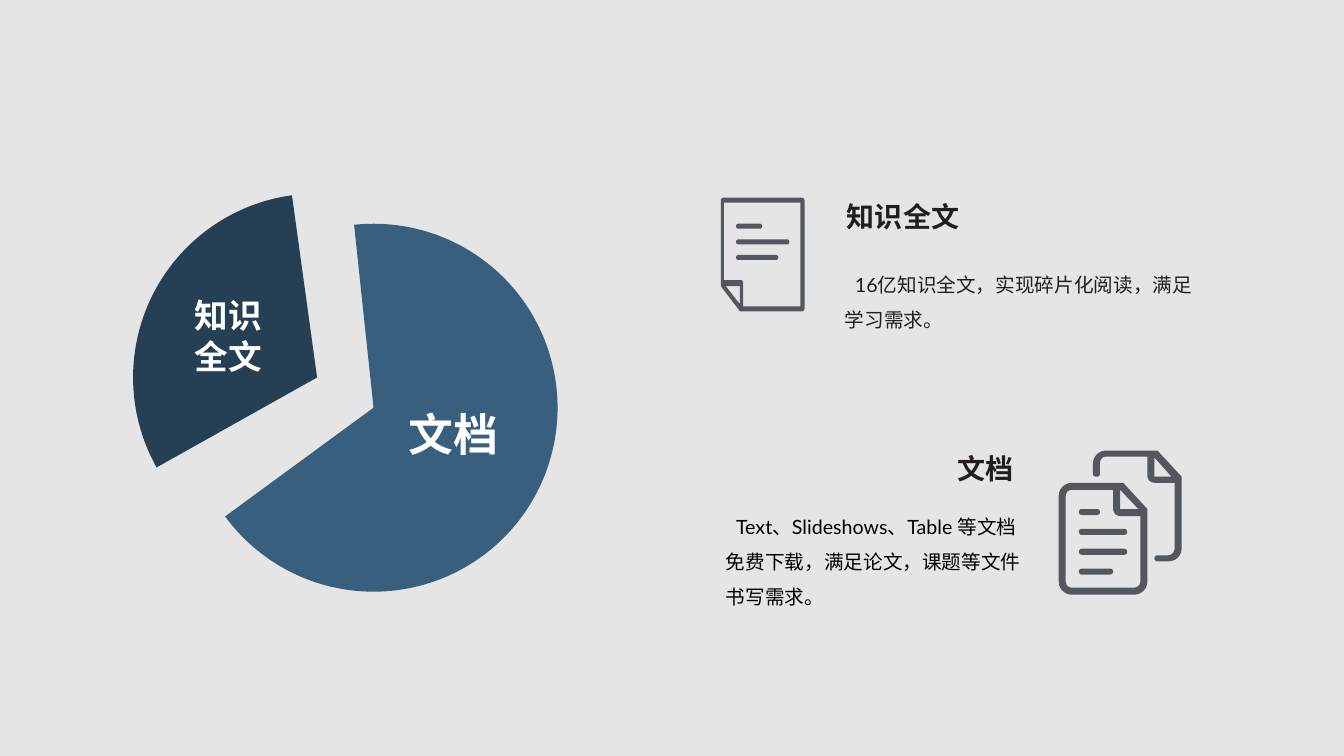
from pptx import Presentation
from pptx.dml.color import RGBColor
from pptx.enum.shapes import MSO_SHAPE
from pptx.enum.text import PP_ALIGN
from pptx.util import Inches, Pt

PIE = MSO_SHAPE.PIE
LEFT, CENTER, RIGHT = PP_ALIGN.LEFT, PP_ALIGN.CENTER, PP_ALIGN.RIGHT
COLORS = {"back": "E5E5E5", "blue": "385F7D", "navy": "253F54", "icon": "53585F",
          "ink": "231D1F", "black": "000000", "white": "FFFFFF"}
RGB = {name: RGBColor.from_string(value) for name, value in COLORS.items()}

prs = Presentation()
prs.slide_width, prs.slide_height = Inches(13.33), Inches(7.5)
U = prs.slide_height / 7.5  # one square cell of the 13.33 by 7.5 grid
s = prs.slides.add_slide(prs.slide_layouts[6])
s.background.fill.solid()
s.background.fill.fore_color.rgb = RGB["back"]


def add_text(parent, box, lines, size, color, align=LEFT, bold=False, spacing=None, indent=0):
    tb = parent.shapes.add_textbox(*[round(v * U) for v in box])
    tf = tb.text_frame
    tf.word_wrap = True
    tf.margin_left = tf.margin_right = round(0.05 * U)
    tf.margin_top = tf.margin_bottom = round(0.02 * U)
    tf.text = lines
    for p in tf.paragraphs:
        p.alignment = align
        p.line_spacing = spacing
        p.font.name, p.font.size, p.font.bold = "Lato", Pt(size), bold
        p.font.color.rgb = RGB[color]
        if indent:
            p._p.get_or_add_pPr().set("indent", str(round(indent * U)))


def rounded(corners):
    """Trace a closed outline of (x, y, radius) corners as slide points."""
    points = []
    for i, (x, y, radius) in enumerate(corners):
        ends = []
        for nx, ny, _ in (corners[i - 1], corners[(i + 1) % len(corners)]):
            share = radius / ((nx - x) ** 2 + (ny - y) ** 2) ** 0.5
            ends.append((x + (nx - x) * share, y + (ny - y) * share))
        (ax, ay), (bx, by) = ends
        for t in [k / 6 for k in range(7)] if radius else [0]:
            # cubic arc whose handles reach 0.55 of the way to the corner
            wa = (1 - t) ** 3 + 3 * (1 - t) ** 2 * t * 0.45
            wb = t ** 3 + 3 * (1 - t) * t ** 2 * 0.45
            wc = 1 - wa - wb
            points.append((round((wa * ax + wb * bx + wc * x) * U),
                           round((wa * ay + wb * by + wc * y) * U)))
    return points


# Pie slices: left, top, start and end in degrees
for left, top, start, end, color in [(1.88, 2.22, 263.93, 143.76, "blue"),
                                     (1.32, 1.92, 150.73, 262.15, "navy")]:
    sp = s.shapes.add_shape(PIE, *[round(v * U) for v in (left, top, 3.65, 3.65)])
    sp.adjustments[0], sp.adjustments[1] = start * 0.6, end * 0.6
    sp.fill.solid()
    sp.fill.fore_color.rgb = RGB[color]
    sp.line.fill.background()
    sp.shadow.inherit = False

add_text(s, (1.53, 2.91, 1.47, 0.45), "知识\n全文", 24, "white", CENTER, True)
add_text(s, (3.76, 4.01, 1.47, 0.45), "文档", 32, "white", CENTER, True)

# Icon outlines: corners as x, y, radius
page = [
    [(7.15, 1.96, 0.03), (7.98, 1.96, 0.03), (7.98, 3.09, 0.03), (7.34, 3.09, 0), (7.15, 2.84, 0)],
    [(7.18, 2.01, 0), (7.94, 2.01, 0), (7.94, 3.04, 0), (7.37, 3.04, 0), (7.37, 2.78, 0.02),
     (7.18, 2.78, 0)],
    [(7.34, 3.02, 0), (7.2, 2.84, 0), (7.34, 2.84, 0)],
]
pages = [
    # front sheet
    [(10.5, 4.79, 0.13), (11.14, 4.79, 0), (11.38, 5.05, 0), (11.38, 5.9, 0.13), (10.5, 5.9, 0.13)],
    [(10.57, 4.86, 0.06), (11.04, 4.86, 0), (11.04, 5.12, 0.07), (11.31, 5.12, 0),
     (11.31, 5.83, 0.06), (10.57, 5.83, 0.06)],
    [(11.11, 5.05, 0), (11.11, 4.86, 0), (11.29, 5.05, 0)],
    # back sheet
    [(10.84, 4.47, 0.13), (11.48, 4.47, 0), (11.72, 4.73, 0), (11.72, 5.57, 0.13),
     (11.45, 5.57, 0.03), (11.45, 5.51, 0.03), (11.65, 5.51, 0.07), (11.65, 4.79, 0),
     (11.38, 4.79, 0.07), (11.38, 4.53, 0), (10.91, 4.53, 0.06), (10.91, 4.73, 0.03),
     (10.84, 4.73, 0.03)],
    [(11.45, 4.73, 0), (11.45, 4.54, 0), (11.62, 4.73, 0)],
]

# Text lines on the icons: left, first top, pitch, thickness, right ends
page_bars = (7.3, 2.22, 0.155, 0.05, [7.56, 7.83, 7.72])
pages_bars = (10.7, 5.05, 0.197, 0.06, [10.91, 11.18, 11.18, 11.04])

# Topics: texts and icon in one group each
topics = [
    ("文档", (7.15, 4.46, 2.95, 0.51), RIGHT,
     "Text、Slideshows、Table 等文档免费下载，满足论文，课题等文件书写需求。",
     (7.15, 4.97, 3.09, 1.29), "black", pages, pages_bars),
    ("知识全文", (8.35, 1.96, 3.42, 0.61), LEFT,
     "16亿知识全文，实现碎片化阅读，满足学习需求。",
     (8.33, 2.57, 3.56, 1.48), "ink", page, page_bars),
]
for title, title_box, align, body, body_box, color, outlines, bars in topics:
    group = s.shapes.add_group_shape()
    add_text(group, body_box, body, 14, color, spacing=1.5, indent=0.1)
    add_text(group, title_box, title, 20, "ink", align, True)
    left, first, pitch, thick, rights = bars
    contours = list(outlines)
    for i, right in enumerate(rights):
        top = first + i * pitch
        contours.append([(x, y, thick / 2) for x, y in [(left, top), (right, top),
                                                       (right, top + thick), (left, top + thick)]])
    traced = [rounded(c) for c in contours]
    fb = group.shapes.build_freeform(*traced[0][0])
    fb.add_line_segments(traced[0][1:])
    for points in traced[1:]:
        fb.move_to(*points[0])
        fb.add_line_segments(points[1:])
    sp = fb.convert_to_shape()
    sp.fill.solid()
    sp.fill.fore_color.rgb = RGB["icon"]
    sp.line.fill.background()
    sp.shadow.inherit = False

prs.save("out.pptx")
